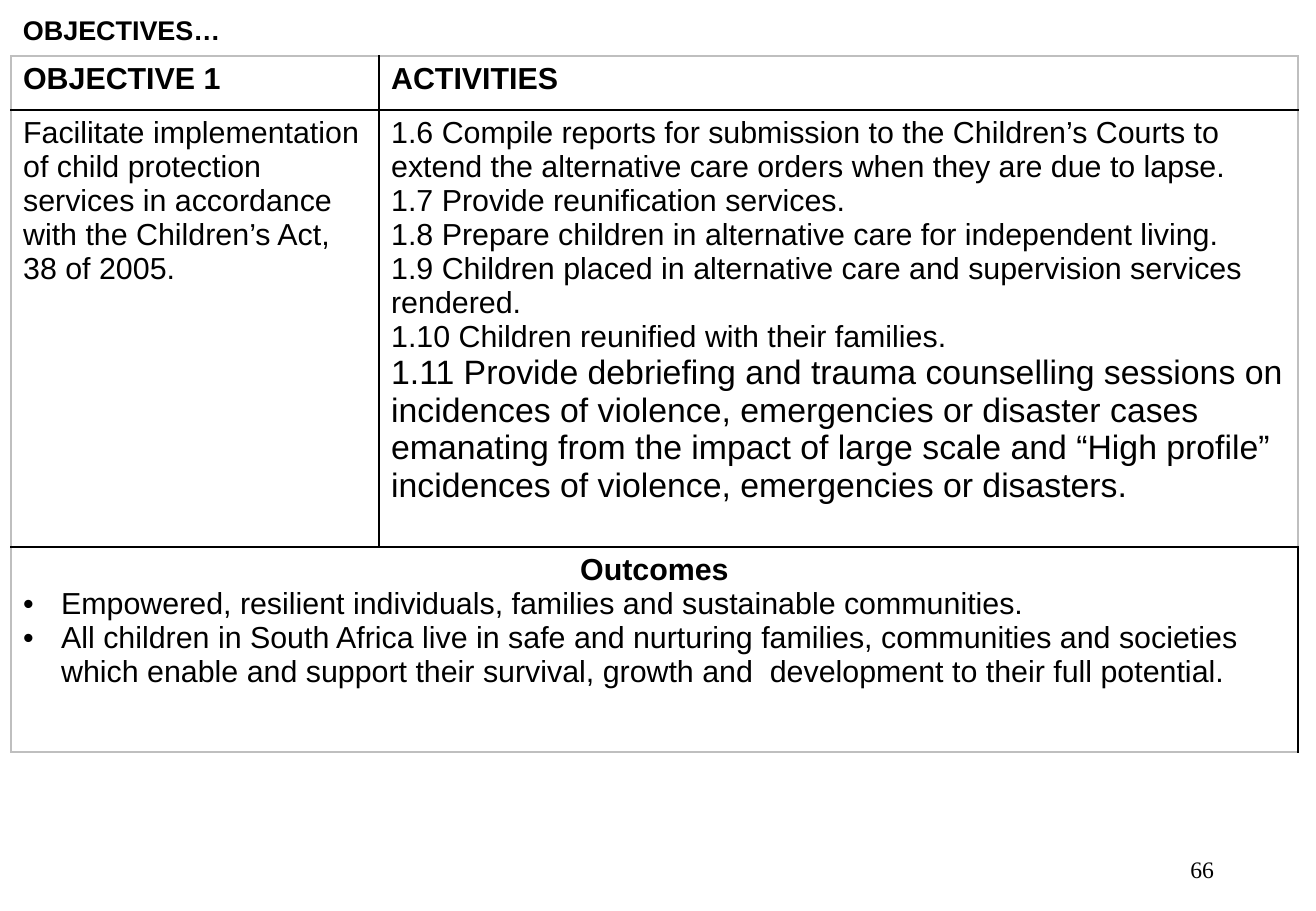
from lxml.etree import SubElement
from pptx import Presentation
from pptx.dml.color import RGBColor
from pptx.enum.text import MSO_ANCHOR, PP_ALIGN
from pptx.oxml.ns import qn
from pptx.util import Pt

COLORS = {"text": "000000", "rule": "000000", "frame": "BFBFBF"}
BODY = {"name": "Arial", "size": Pt(18), "bold": False}
HEADING = {**BODY, "bold": True}
LARGE = {**BODY, "size": Pt(20)}
TITLE = {**HEADING, "size": Pt(16)}
NUMBER = {"name": "Times New Roman", "size": Pt(14), "bold": False}

# Each line: text, font format, paragraph format, bulleted
LEFT, CENTER, RIGHT = ({"alignment": side} for side in (PP_ALIGN.LEFT, PP_ALIGN.CENTER, PP_ALIGN.RIGHT))
BOXES = [
    ((11, 7, 1163, 49), ("OBJECTIVES…", TITLE, {**LEFT, "line_spacing": 0.9}, False)),
    ((930, 845, 296, 49), ("66", NUMBER, RIGHT, False)),
]
ACTIVITIES = [
    "1.6 Compile reports for submission to the Children’s Courts to extend the alternative care orders when they are due to lapse.",
    "1.7 Provide reunification services.",
    "1.8 Prepare children in alternative care for independent living.",
    "1.9 Children placed in alternative care and supervision services rendered.",
    "1.10 Children reunified with their families.",
]
DEBRIEFING = (
    "1.11 Provide debriefing and trauma counselling sessions on incidences of violence, "
    "emergencies or disaster cases emanating from the impact of large scale and “High profile” "
    "incidences of violence, emergencies or disasters."
)
OBJECTIVE = (
    "Facilitate implementation of child protection services in accordance with "
    "the Children’s Act, 38 of 2005."
)
OUTCOMES = [
    "Empowered, resilient individuals, families and sustainable communities.",
    "All children in South Africa live in safe and nurturing families, communities and societies "
    "which enable and support their survival, growth and  development to their full potential.",
]
CELLS = {
    (0, 0): [("OBJECTIVE 1", HEADING, LEFT, False)],
    (0, 1): [("ACTIVITIES", HEADING, LEFT, False)],
    (1, 0): [(OBJECTIVE, BODY, LEFT, False)],
    (1, 1): [(text, BODY, LEFT, False) for text in ACTIVITIES] + [(DEBRIEFING, LARGE, LEFT, False)],
    (2, 0): [("Outcomes", HEADING, CENTER, False)] + [(text, BODY, LEFT, True) for text in OUTCOMES],
}
TABLE_LEFT, TABLE_TOP = 11, 56
COLUMNS = [368, 919]
ROWS = [54, 437, 205]
BULLET_INDENT = 38


def px(length):
    return round(length * 914400 / 121.5)


def write_lines(frame, lines):
    for index, (text, font_format, para_format, bulleted) in enumerate(lines):
        para = frame.paragraphs[0] if index == 0 else frame.add_paragraph()
        for name, value in para_format.items():
            setattr(para, name, value)
        if bulleted:
            properties = para._p.get_or_add_pPr()
            properties.set("marL", str(px(BULLET_INDENT)))
            properties.set("indent", str(-px(BULLET_INDENT)))
            SubElement(properties, qn("a:buFont"), typeface="Arial")
            SubElement(properties, qn("a:buChar"), char="•")
        span = para.add_run()
        span.text = text
        for name, value in font_format.items():
            setattr(span.font, name, value)
        span.font.color.rgb = RGBColor.from_string(COLORS["text"])


def draw_borders(cell, row, column):
    """Grey on the outer frame, black on the rules between cells."""
    outer = {
        "lnL": column == 0,
        "lnR": column == len(COLUMNS) - 1,
        "lnT": row == 0,
        "lnB": row == len(ROWS) - 1,
    }
    properties = cell._tc.get_or_add_tcPr()
    for side, on_frame in outer.items():
        line = SubElement(properties, qn(f"a:{side}"), w=str(Pt(1)))
        fill = SubElement(line, qn("a:solidFill"))
        SubElement(fill, qn("a:srgbClr"), val=COLORS["frame" if on_frame else "rule"])


deck = Presentation()
deck.slide_width, deck.slide_height = px(1316), px(911)
page = deck.slides.add_slide(deck.slide_layouts[6])

for place, line in BOXES:
    box = page.shapes.add_textbox(*map(px, place))
    box.text_frame.word_wrap = True
    box.text_frame.vertical_anchor = MSO_ANCHOR.MIDDLE
    write_lines(box.text_frame, [line])

table = page.shapes.add_table(
    len(ROWS), len(COLUMNS), *map(px, (TABLE_LEFT, TABLE_TOP, sum(COLUMNS), sum(ROWS)))
).table
table.first_row = table.horz_banding = False
for column, width in zip(table.columns, COLUMNS):
    column.width = px(width)
for row, height in zip(table.rows, ROWS):
    row.height = px(height)
table.cell(2, 0).merge(table.cell(2, 1))

for row in range(len(ROWS)):
    for column in range(len(COLUMNS)):
        cell = table.cell(row, column)
        draw_borders(cell, row, column)
        cell.fill.background()
        write_lines(cell.text_frame, CELLS.get((row, column), []))

deck.save("out.pptx")
